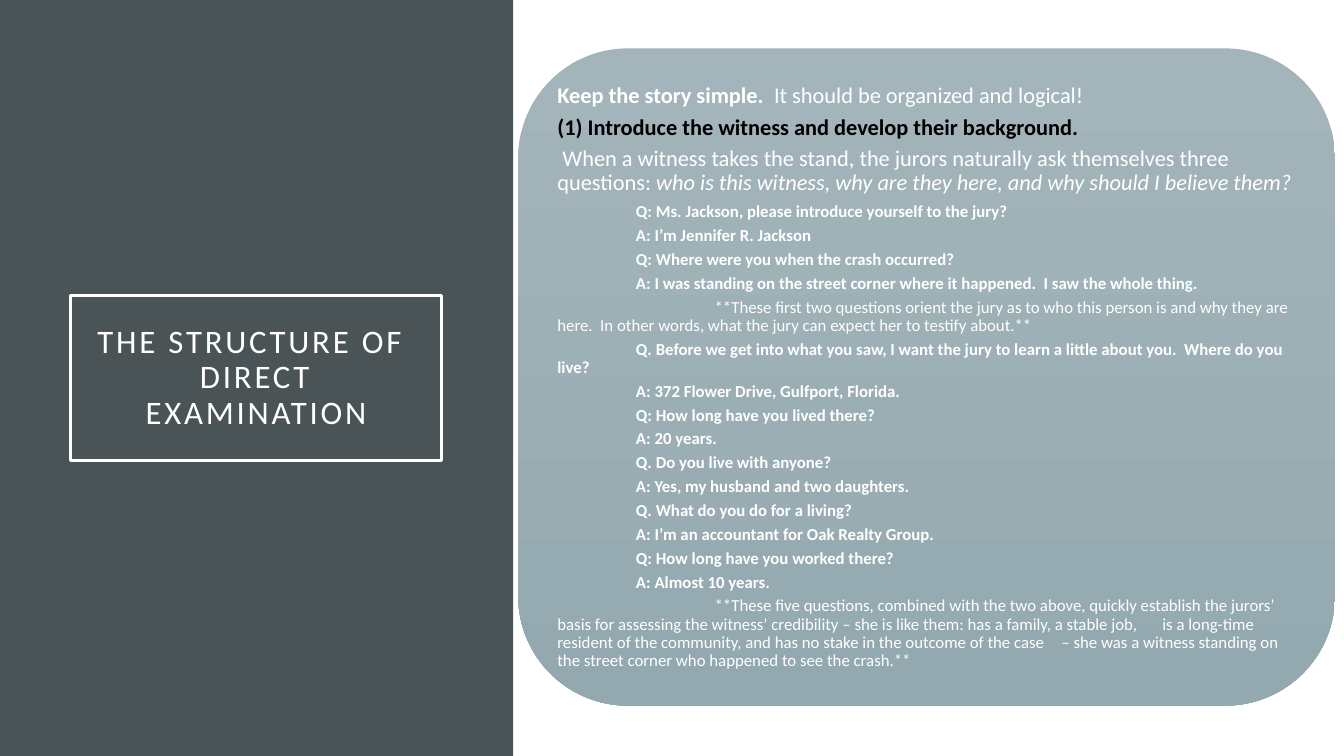
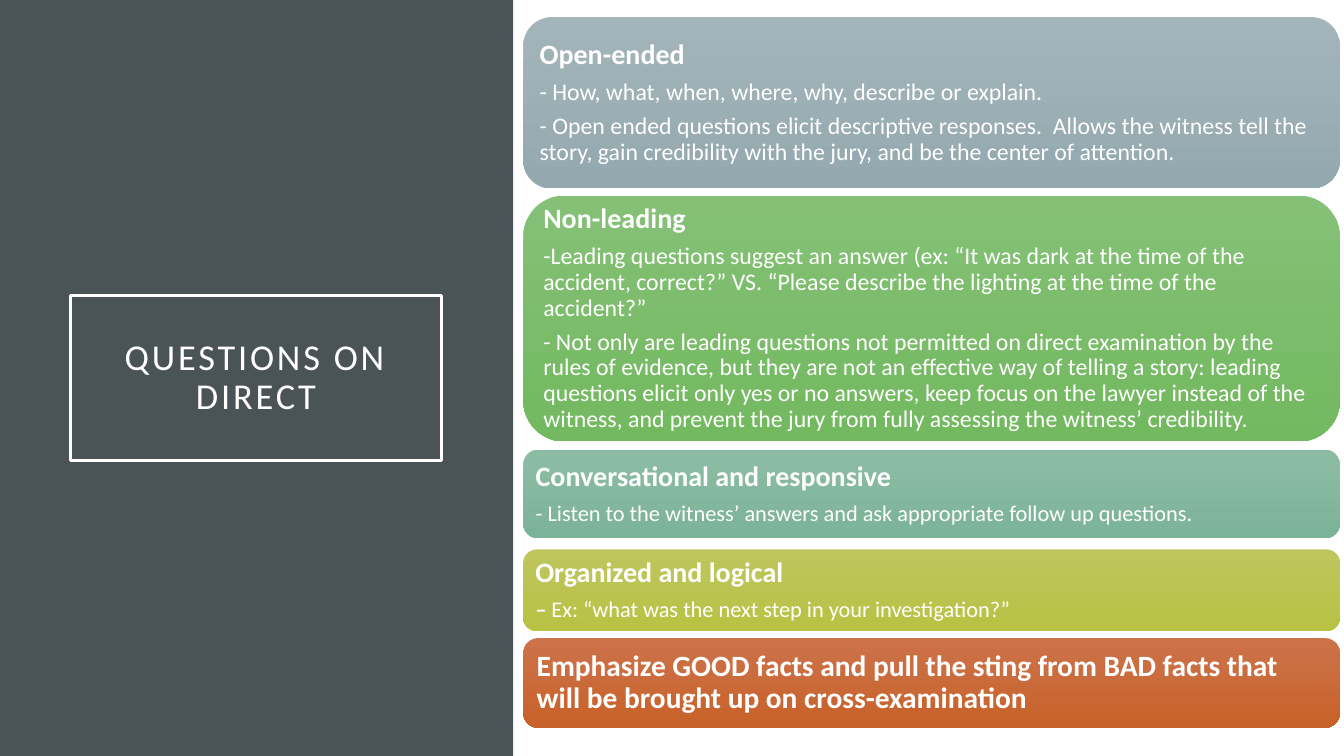
from lxml import etree
from pptx import Presentation
from pptx import util as u
from pptx.dml.color import RGBColor
from pptx.enum import shapes, text
from pptx.oxml.ns import qn

FONT = "Calibri"
TITLE_ONLY = 5
COLORS = {"white": "FFFFFF", "black": "000000", "band": "4A5356"}
# Top and bottom colour of each panel gradient
GRADIENTS = {
    "slate": ("A3B5BB", "93A9AF"),
    "green": ("85C076", "73B960"),
    "teal": ("8DBCA5", "7BB398"),
    "lime": ("BEC65E", "B8C243"),
    "rust": ("CC734B", "C86128"),
}
PANEL_WIDTH = 8.1
QA_INDENT = 0.78
BOLD = {"bold": True}
ITALIC = {"italic": True}

STORY_OPENING = [
    [("Keep the story simple.  ", BOLD), ("It should be organized and logical!", {})],
    [("(1) Introduce the witness and develop their background.",
      {"bold": True, "color": "black"})],
    [(" When a witness takes the stand, the jurors naturally ask themselves three questions: ", {}),
     ("who is this witness, why are they here, and why should I believe them?", ITALIC)],
]
ORIENTING_QUESTIONS = [
    "Q: Ms. Jackson, please introduce yourself to the jury?",
    "A: I’m Jennifer R. Jackson",
    "Q: Where were you when the crash occurred?",
    "A: I was standing on the street corner where it happened.  I saw the whole thing.",
]
ORIENTING_NOTE = (
    "**These first two questions orient the jury as to who this person is and why they "
    "are here.  In other words, what the jury can expect her to testify about.**")
BACKGROUND_QUESTIONS = [
    "Q. Before we get into what you saw, I want the jury to learn a little about you.  "
    "Where do you live?",
    "A: 372 Flower Drive, Gulfport, Florida.",
    "Q: How long have you lived there?",
    "A: 20 years.",
    "Q. Do you live with anyone?",
    "A: Yes, my husband and two daughters.",
    "Q. What do you do for a living?",
    "A: I’m an accountant for Oak Realty Group.",
    "Q: How long have you worked there?",
    "A: Almost 10 years.",
]
BACKGROUND_NOTE = (
    "**These five questions, combined with the two above, quickly establish the jurors’ "
    "basis for assessing the witness’ credibility – she is like them: has a family, "
    "a stable job,\tis a long-time resident of the community, and has no stake in the "
    "outcome of the case\t– she was a witness standing on the street corner who happened "
    "to see the crash.**")

# Gradient, top, height, inset, heading, heading size, detail size, details
QUESTION_PANELS = [
    ("slate", 0.17, 1.7, 0.08, "Open-ended", 20, 17, [
        [("- How, what, when, where, why, describe or explain.", {})],
        [("- Open ended questions elicit descriptive responses.  Allows the witness tell "
          "the story, gain credibility with the jury, and be the center of attention.", {})],
    ]),
    ("green", 1.94, 2.44, 0.08, "Non-leading", 20, 17, [
        [("-Leading questions suggest an answer (ex: “It was dark at the time of the "
          "accident, correct?” VS. “Please describe the lighting at the time of the "
          "accident?”", {})],
        [("- Not only are leading questions not permitted on direct examination by the "
          "rules of evidence, but they are not an effective way of telling a story: "
          "leading questions elicit only yes or no answers, keep focus on the lawyer "
          "instead of the witness, and prevent the jury from fully assessing the "
          "witness’ credibility.", {})],
    ]),
    ("teal", 4.46, 0.88, 0.08, "Conversational and responsive", 20, 16, [
        [("- Listen to the witness’ answers and ask appropriate follow up questions.", {})],
    ]),
    ("lime", 5.45, 0.81, 0.08, "Organized and logical", 20, 16, [
        [("– ", BOLD), ("Ex: “what was the next step in your investigation?”", {})],
    ]),
    ("rust", 6.33, 0.89, 0.09,
     "Emphasize GOOD facts and pull the sting from BAD facts that will be brought up "
     "on cross-examination", 21, 0, []),
]


def rgb(name):
    return RGBColor.from_string(COLORS[name])


def write(paragraph, words, size, bold=False, italic=False, color="white", spacing=0):
    """Add formatted words to a paragraph; a newline becomes a line break."""
    for number, line in enumerate(words.split("\n")):
        if number:
            paragraph.add_line_break()
        run = paragraph.add_run()
        run.text = line
        font = run.font
        font.name, font.size = FONT, u.Pt(size)
        font.bold, font.italic = bold, italic
        font.color.rgb = rgb(color)
        if spacing:
            run._r.get_or_add_rPr().set("spc", str(spacing * 100))


def add_paragraph(frame, runs, size, indent=0, tab_stop=None):
    paragraph = frame.add_paragraph() if frame.text else frame.paragraphs[0]
    paragraph.alignment = text.PP_ALIGN.LEFT
    paragraph.line_spacing = 0.9
    paragraph.space_after = u.Pt(round(size * 0.34, 1))
    properties = paragraph._p.get_or_add_pPr()
    properties.set("marL", "0")
    properties.set("indent", str(u.Inches(indent)))
    if tab_stop:
        stops = etree.SubElement(properties, qn("a:tabLst"))
        etree.SubElement(stops, qn("a:tab"), pos=str(u.Inches(tab_stop)), algn="l")
    for words, style in runs:
        write(paragraph, words, size, **style)


def prepare_frame(shape, inset):
    frame = shape.text_frame
    frame.word_wrap = True
    frame.auto_size = text.MSO_AUTO_SIZE.NONE
    frame.vertical_anchor = text.MSO_ANCHOR.MIDDLE
    frame.margin_left = frame.margin_right = u.Inches(inset)
    frame.margin_top = frame.margin_bottom = u.Inches(inset)
    return frame


def add_shape(slide, preset, left, top, width, height):
    shape = slide.shapes.add_shape(preset, *map(u.Inches, (left, top, width, height)))
    shape.shadow.inherit = False
    shape.line.fill.background()
    return shape


def add_panel(slide, gradient, left, top, height, inset):
    """Add a rounded gradient panel and return its text frame."""
    panel = add_shape(slide, shapes.MSO_SHAPE.ROUNDED_RECTANGLE,
                      left, top, PANEL_WIDTH, height)
    panel.fill.gradient()
    panel.fill.gradient_angle = 270
    for stop, color in zip(panel.fill.gradient_stops, GRADIENTS[gradient]):
        stop.color.rgb = RGBColor.from_string(color)
    return prepare_frame(panel, inset)


def start_slide(deck, heading, size):
    """Add a slide with the dark side band and the framed title."""
    slide = deck.slides.add_slide(deck.slide_layouts[TITLE_ONLY])
    title = slide.shapes.title
    band = add_shape(slide, shapes.MSO_SHAPE.RECTANGLE, 0, 0, 5.09, 7.5)
    band.fill.solid()
    band.fill.fore_color.rgb = rgb("band")
    title._element.addprevious(band._element)

    title.left, title.top = u.Inches(0.7), u.Inches(2.93)
    title.width, title.height = u.Inches(3.68), u.Inches(1.64)
    title.line.color.rgb = rgb("white")
    title.line.width = u.Pt(2.5)
    paragraph = prepare_frame(title, 0.2).paragraphs[0]
    paragraph.alignment = text.PP_ALIGN.CENTER
    paragraph.line_spacing = 0.9
    write(paragraph, heading, size, spacing=2)
    return slide


def build_structure_slide(deck):
    slide = start_slide(deck, "THE STRUCTURE OF \nDIRECT EXAMINATION", 23.4)
    frame = add_panel(slide, "slate", 5.14, 0.48, 6.52, 0.07)
    for runs in STORY_OPENING:
        add_paragraph(frame, runs, 16)
    # Each exchange is followed by a note indented one step further
    for questions, note, tab_stop in (
            (ORIENTING_QUESTIONS, ORIENTING_NOTE, None),
            (BACKGROUND_QUESTIONS, BACKGROUND_NOTE, 7)):
        for line in questions:
            add_paragraph(frame, [(line, BOLD)], 12, QA_INDENT)
        add_paragraph(frame, [(note, {})], 12, 2 * QA_INDENT, tab_stop)


def build_questions_slide(deck):
    slide = start_slide(deck, "QUESTIONS ON DIRECT", 26)
    for gradient, top, height, inset, heading, size, detail_size, details in QUESTION_PANELS:
        frame = add_panel(slide, gradient, 5.19, top, height, inset)
        add_paragraph(frame, [(heading, BOLD)], size)
        for runs in details:
            add_paragraph(frame, runs, detail_size)


def main():
    deck = Presentation()
    deck.slide_width, deck.slide_height = u.Inches(13.33), u.Inches(7.5)
    build_structure_slide(deck)
    build_questions_slide(deck)
    deck.save("out.pptx")


if __name__ == "__main__":
    main()
